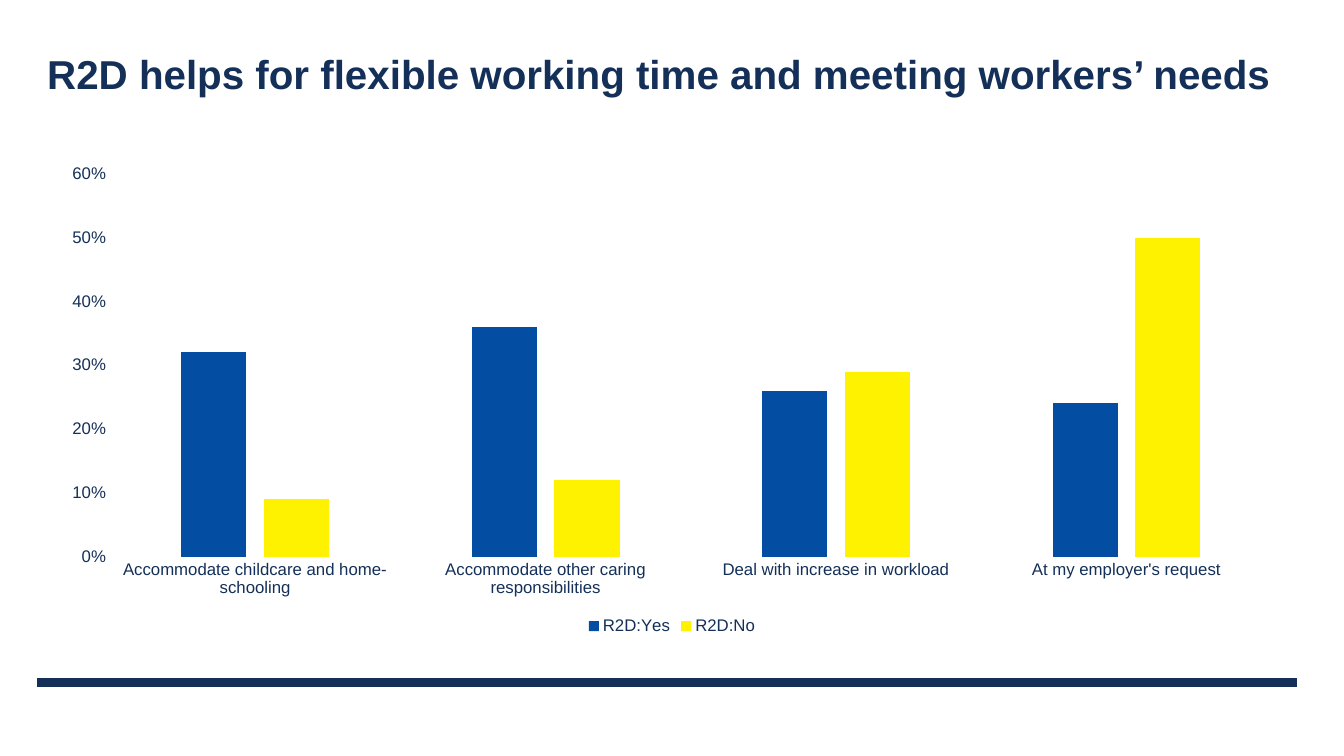
import pptx
import pptx.chart.data
import pptx.dml.color
import pptx.enum.chart
import pptx.enum.shapes
import pptx.enum.text
import pptx.oxml
import pptx.util
from pptx.util import Inches

NAVY = "143058"
WHITE = "FFFFFF"
FONT = "Arial"
LEFT, WIDTH = Inches(0.37), Inches(12.49)
CATEGORIES = [
    "Accommodate childcare and home-schooling",
    "Accommodate other caring responsibilities",
    "Deal with increase in workload",
    "At my employer's request",
]
SERIES = [
    ("R2D:Yes", "034EA2", (0.32, 0.36, 0.26, 0.24)),
    ("R2D:No", "FFF200", (0.09, 0.12, 0.29, 0.5)),
]


def color(value):
    """Return the colour for a hex string."""
    return pptx.dml.color.RGBColor.from_string(value)


def style_font(font, size, bold=False):
    """Apply the slide's typeface and text colour."""
    font.name = FONT
    font.size = pptx.util.Pt(size)
    font.bold = bold
    font.color.rgb = color(NAVY)


def style_line(line, value, width):
    """Give a line a solid colour and a width in points."""
    line.color.rgb = color(value)
    line.width = pptx.util.Pt(width)


def add_title(slide, left, top, width, height):
    """Place the slide title in the given box."""
    frame = slide.shapes.add_textbox(left, top, width, height).text_frame
    frame.word_wrap = True
    frame.vertical_anchor = pptx.enum.text.MSO_ANCHOR.MIDDLE
    frame.text = "R2D helps for flexible working time and meeting workers’ needs"
    style_font(frame.paragraphs[0].runs[0].font, 28.8, bold=True)


def add_footer_rule(slide, left, top, width):
    """Draw the thick rule along the foot of the slide."""
    rule = slide.shapes.add_connector(
        pptx.enum.shapes.MSO_CONNECTOR.STRAIGHT, left, top, left + width, top)
    style_line(rule.line, NAVY, 6)
    properties = rule._element.spPr
    properties.append(pptx.oxml.parse_xml(
        '<a:effectLst xmlns:a="http://schemas.openxmlformats.org/drawingml/2006/main"/>'))


def add_reasons_chart(slide, left, top, width, height):
    """Place the column chart of reasons in the given box."""
    data = pptx.chart.data.CategoryChartData(number_format="0%")
    data.categories = CATEGORIES
    for name, _, values in SERIES:
        data.add_series(name, values)
    chart = slide.shapes.add_chart(
        pptx.enum.chart.XL_CHART_TYPE.COLUMN_CLUSTERED,
        left, top, width, height, data).chart
    chart.has_title = False
    style_font(chart.font, 12)

    plot = chart.plots[0]
    plot.vary_by_categories = False
    plot.gap_width = 219
    plot.overlap = -27
    for series, (_, fill, _) in zip(plot.series, SERIES):
        series.format.fill.solid()
        series.format.fill.fore_color.rgb = color(fill)
        series.invert_if_negative = False

    for axis in (chart.category_axis, chart.value_axis):
        axis.major_tick_mark = pptx.enum.chart.XL_TICK_MARK.NONE
        axis.minor_tick_mark = pptx.enum.chart.XL_TICK_MARK.NONE
        style_font(axis.tick_labels.font, 12)
    style_line(chart.category_axis.format.line, WHITE, 0.75)

    value_axis = chart.value_axis
    value_axis.minimum_scale = 0
    value_axis.maximum_scale = 0.6
    value_axis.major_unit = 0.1
    value_axis.format.line.fill.background()
    value_axis.has_major_gridlines = True
    style_line(value_axis.major_gridlines.format.line, WHITE, 0.75)
    value_axis.tick_labels.number_format = "0%"
    value_axis.tick_labels.number_format_is_linked = False

    chart.has_legend = True
    chart.legend.position = pptx.enum.chart.XL_LEGEND_POSITION.BOTTOM
    chart.legend.include_in_layout = False
    style_font(chart.legend.font, 12)


def main():
    """Build and save the presentation."""
    presentation = pptx.Presentation()
    presentation.slide_width = Inches(13.33)
    presentation.slide_height = Inches(7.5)
    slide = presentation.slides.add_slide(presentation.slide_layouts[6])
    add_footer_rule(slide, LEFT, Inches(6.77), WIDTH)
    add_title(slide, LEFT, Inches(0.3), WIDTH, Inches(0.85))
    add_reasons_chart(slide, LEFT + Inches(0.1), Inches(1.54),
                      WIDTH - Inches(0.1), Inches(4.8))
    presentation.save("out.pptx")


if __name__ == "__main__":
    main()
